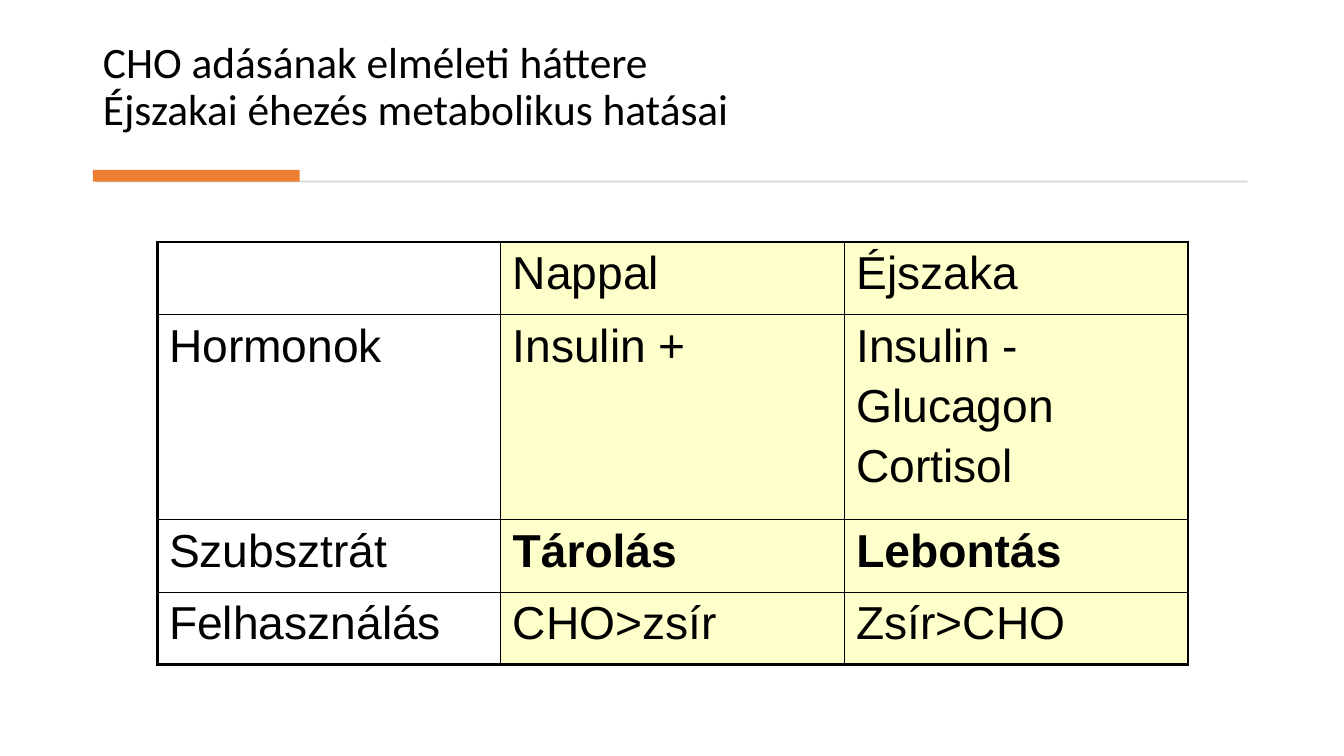
from dataclasses import dataclass

from lxml import etree
from pptx import Presentation
from pptx.dml.color import RGBColor
from pptx.enum.shapes import MSO_SHAPE
from pptx.enum.text import MSO_ANCHOR, MSO_AUTO_SIZE, PP_ALIGN
from pptx.oxml.ns import qn
from pptx.slide import Slide
from pptx.table import _Cell
from pptx.text.text import _Paragraph
from pptx.util import Cm, Pt

RECTANGLE = MSO_SHAPE.RECTANGLE
BOTTOM = MSO_ANCHOR.BOTTOM
TOP = MSO_ANCHOR.TOP
LEFT = PP_ALIGN.LEFT
NO_AUTOFIT = MSO_AUTO_SIZE.NONE

BLACK = "000000"
YELLOW = "FFFFCC"
OUTER_BORDER = 2.25
INNER_BORDER = 1
COLUMN_WIDTH = 8.66
ROW_HEIGHTS = (1.82, 5.18, 1.82, 1.82)
TITLE_LINES = ("CHO adásának elméleti háttere", "Éjszakai éhezés metabolikus hatásai")


@dataclass(frozen=True)
class Bar:
    left: float
    top: float
    width: float
    height: float
    color: str


@dataclass(frozen=True)
class Row:
    label: str
    day: str
    night: tuple[str, ...]
    bold: bool = False


BARS = (
    Bar(2.41, 4.55, 29.03, 0.05, "D5D5D5"),
    Bar(2.34, 4.28, 5.21, 0.3, "ED7D31"),
)
ROWS = (
    Row("", "Nappal", ("Éjszaka",)),
    Row("Hormonok", "Insulin +", ("Insulin -", "Glucagon", "Cortisol")),
    Row("Szubsztrát", "Tárolás", ("Lebontás",), bold=True),
    Row("Felhasználás", "CHO>zsír", ("Zsír>CHO",)),
)


def rgb(color: str) -> RGBColor:
    return RGBColor.from_string(color)


def add_run(paragraph: _Paragraph, text: str, font: str, size: float, bold: bool = False) -> None:
    run = paragraph.add_run()
    run.text = text
    run.font.name = font
    run.font.size = Pt(size)
    run.font.bold = bold
    run.font.color.rgb = rgb(BLACK)


def add_title(slide: Slide) -> None:
    title = slide.shapes.title
    title.left, title.top, title.width, title.height = Cm(2.34), Cm(0.71), Cm(29.18), Cm(2.82)
    frame = title.text_frame
    frame.word_wrap = True
    frame.auto_size = NO_AUTOFIT
    frame.vertical_anchor = BOTTOM
    paragraph = frame.paragraphs[0]
    paragraph.alignment = LEFT
    paragraph.line_spacing = 0.9
    for index, line in enumerate(TITLE_LINES):
        if index:
            paragraph.add_line_break()
        add_run(paragraph, line, "Calibri", 31)


def add_bar(slide: Slide, bar: Bar) -> None:
    shape = slide.shapes.add_shape(RECTANGLE, Cm(bar.left), Cm(bar.top), Cm(bar.width), Cm(bar.height))
    shape.shadow.inherit = False
    shape.fill.solid()
    shape.fill.fore_color.rgb = rgb(bar.color)
    shape.line.fill.background()


def set_borders(cell: _Cell, widths: dict[str, float]) -> None:
    properties = cell._tc.get_or_add_tcPr()
    for index, (side, width) in enumerate(widths.items()):
        line = etree.Element(qn(f"a:{side}"), w=str(Pt(width)))
        fill = etree.SubElement(line, qn("a:solidFill"))
        etree.SubElement(fill, qn("a:srgbClr"), val=BLACK)
        properties.insert(index, line)


def fill_cell(cell: _Cell, lines: tuple[str, ...], bold: bool) -> None:
    cell.margin_left = cell.margin_right = Cm(0.3)
    cell.margin_top = cell.margin_bottom = Cm(0.15)
    cell.vertical_anchor = TOP
    frame = cell.text_frame
    for index, line in enumerate(lines):
        paragraph = frame.add_paragraph() if index else frame.paragraphs[0]
        paragraph.alignment = LEFT
        paragraph.space_before = Pt(6 if index else 0)
        if line:
            add_run(paragraph, line, "Arial", 33, bold)


def add_comparison_table(slide: Slide) -> None:
    column_count = 3
    last_row, last_column = len(ROWS) - 1, column_count - 1
    table = slide.shapes.add_table(
        len(ROWS), column_count, Cm(3.96), Cm(6.1), Cm(COLUMN_WIDTH * column_count), Cm(sum(ROW_HEIGHTS))
    ).table
    table.first_row = False
    table.horz_banding = False
    for column in table.columns:
        column.width = Cm(COLUMN_WIDTH)
    for row_index, (row, height) in enumerate(zip(ROWS, ROW_HEIGHTS)):
        table.rows[row_index].height = Cm(height)
        for column_index, lines in enumerate(((row.label,), (row.day,), row.night)):
            cell = table.cell(row_index, column_index)
            fill_cell(cell, lines, row.bold and column_index > 0)
            if column_index:
                cell.fill.solid()
                cell.fill.fore_color.rgb = rgb(YELLOW)
            else:
                cell.fill.background()
            on_edge = {
                "lnL": column_index == 0,
                "lnR": column_index == last_column,
                "lnT": row_index == 0,
                "lnB": row_index == last_row,
            }
            set_borders(cell, {side: OUTER_BORDER if edge else INNER_BORDER for side, edge in on_edge.items()})


def main() -> None:
    presentation = Presentation()
    presentation.slide_width = Cm(33.87)
    presentation.slide_height = Cm(19.05)
    slide = presentation.slides.add_slide(presentation.slide_layouts.get_by_name("Title Only"))
    add_title(slide)
    for bar in BARS:
        add_bar(slide, bar)
    add_comparison_table(slide)
    presentation.save("out.pptx")


if __name__ == "__main__":
    main()
